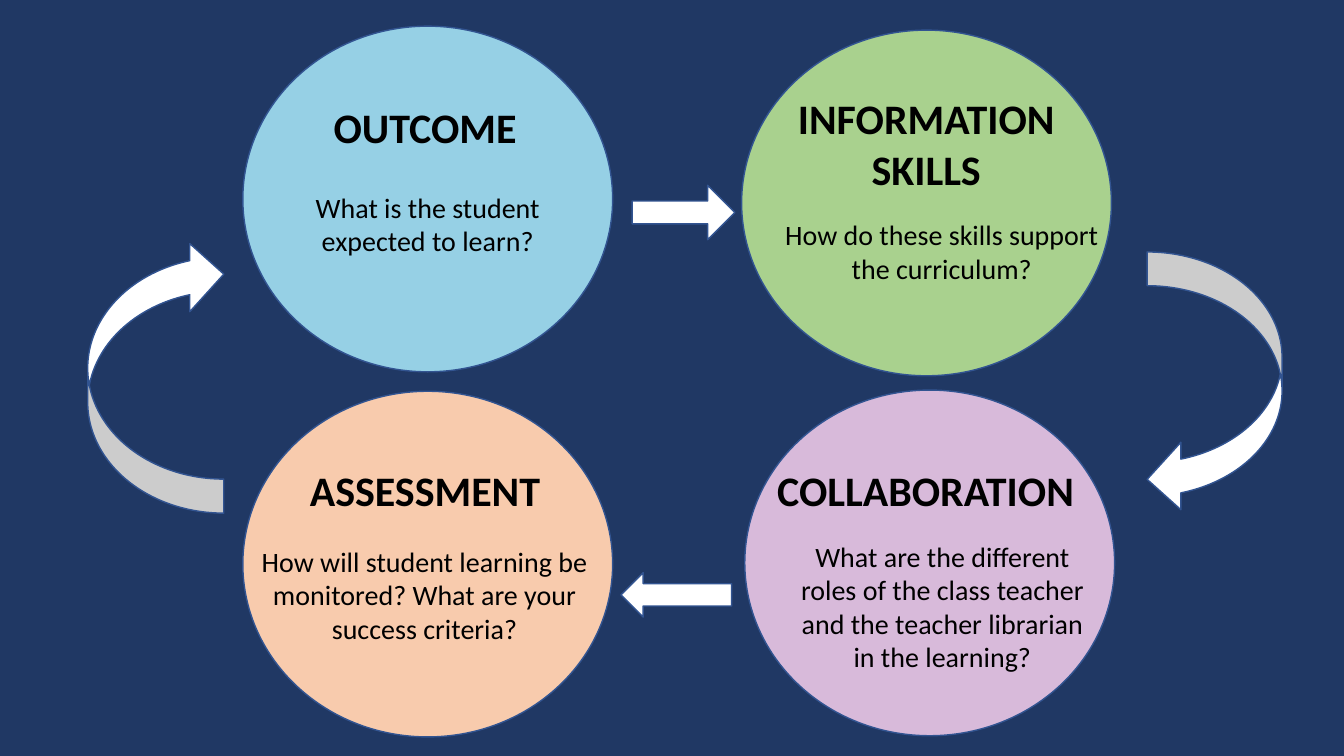
from pptx import Presentation
from pptx import util as u
from pptx.dml.color import RGBColor
from pptx.enum import shapes, text

KIND = shapes.MSO_SHAPE
HUES = {
    "back": "203864", "edge": "325491", "ink": "000000", "arrow": "FFFFFF",
    "blue": "96D0E5", "green": "A9D18E", "peach": "F8CBAD", "mauve": "D8BADA",
}
HEAD = {"size": u.Pt(30), "bold": True, "name": "Calibri"}
BODY = {"size": u.Pt(20), "bold": False, "name": "Calibri"}
DISC = (9.32, 8.71)

# Each stage: hue, disc corner, then title and question with their boxes
STAGES = [
    ("blue", (6.12, 0.66),
     "OUTCOME", (7.54, 2.44, 6.35, 1.55),
     "What is the student expected to learn?", (6.4, 4.67, 8.76, 1.96)),
    ("green", (18.69, 0.76),
     "INFORMATION SKILLS", (19.51, 2.21, 7.67, 2.82),
     "How do these skills support the curriculum?", (19.1, 5.36, 9.27, 1.96)),
    ("mauve", (18.77, 9.83),
     "COLLABORATION", (18.95, 11.58, 8.76, 1.55),
     "What are the different roles of the class teacher and the teacher "
     "librarian in the learning?", (19.61, 13.46, 8.28, 3.68)),
    ("peach", (6.12, 9.86),
     "ASSESSMENT", (6.93, 11.58, 7.57, 1.55),
     "How will student learning be monitored? What are your success criteria?",
     (6.32, 13.59, 8.76, 2.82)),
]

# Each arrow: kind, box, turn in degrees, shaft thickness
ARROWS = [
    (KIND.RIGHT_ARROW, (15.93, 4.67, 2.59, 1.37), 0, 0.42),
    (KIND.CURVED_LEFT_ARROW, (28.91, 6.35, 3.4, 6.58), 0, None),
    (KIND.LEFT_ARROW, (15.65, 14.43, 2.79, 1.12), 0, 0.5),
    (KIND.CURVED_LEFT_ARROW, (2.21, 6.05, 3.43, 6.88), 180, None),
]


def hue(name):
    return RGBColor.from_string(HUES[name])


def add_form(slide, kind, box, fill):
    form = slide.shapes.add_shape(kind, *map(u.Cm, box))
    form.shadow.inherit = False
    form.fill.solid()
    form.fill.fore_color.rgb = hue(fill)
    form.line.color.rgb = hue("edge")
    form.line.width = u.Pt(1)
    return form


def add_text(slide, words, box, style):
    frame = slide.shapes.add_textbox(*map(u.Cm, box)).text_frame
    frame.word_wrap = True
    frame.auto_size = text.MSO_AUTO_SIZE.SHAPE_TO_FIT_TEXT
    para = frame.paragraphs[0]
    para.alignment = text.PP_ALIGN.CENTER
    run = para.add_run()
    run.text = words
    for key, value in style.items():
        setattr(run.font, key, value)
    run.font.color.rgb = hue("ink")


def add_stage(slide, fill, spot, title, top, ask, low):
    add_form(slide, KIND.OVAL, spot + DISC, fill)
    add_text(slide, title, top, HEAD)
    add_text(slide, ask, low, BODY)


def add_arrow(slide, kind, box, turn, shaft):
    arrow = add_form(slide, kind, box, "arrow")
    arrow.rotation = turn
    if shaft:
        arrow.adjustments[0] = shaft


def main():
    deck = Presentation()
    deck.slide_width, deck.slide_height = u.Cm(33.87), u.Cm(19.05)
    slide = deck.slides.add_slide(deck.slide_layouts[6])
    slide.background.fill.solid()
    slide.background.fill.fore_color.rgb = hue("back")

    # Four stages, clockwise from top left
    for stage in STAGES:
        add_stage(slide, *stage)

    # Arrows that close the cycle
    for arrow in ARROWS:
        add_arrow(slide, *arrow)

    deck.save("out.pptx")


if __name__ == "__main__":
    main()
